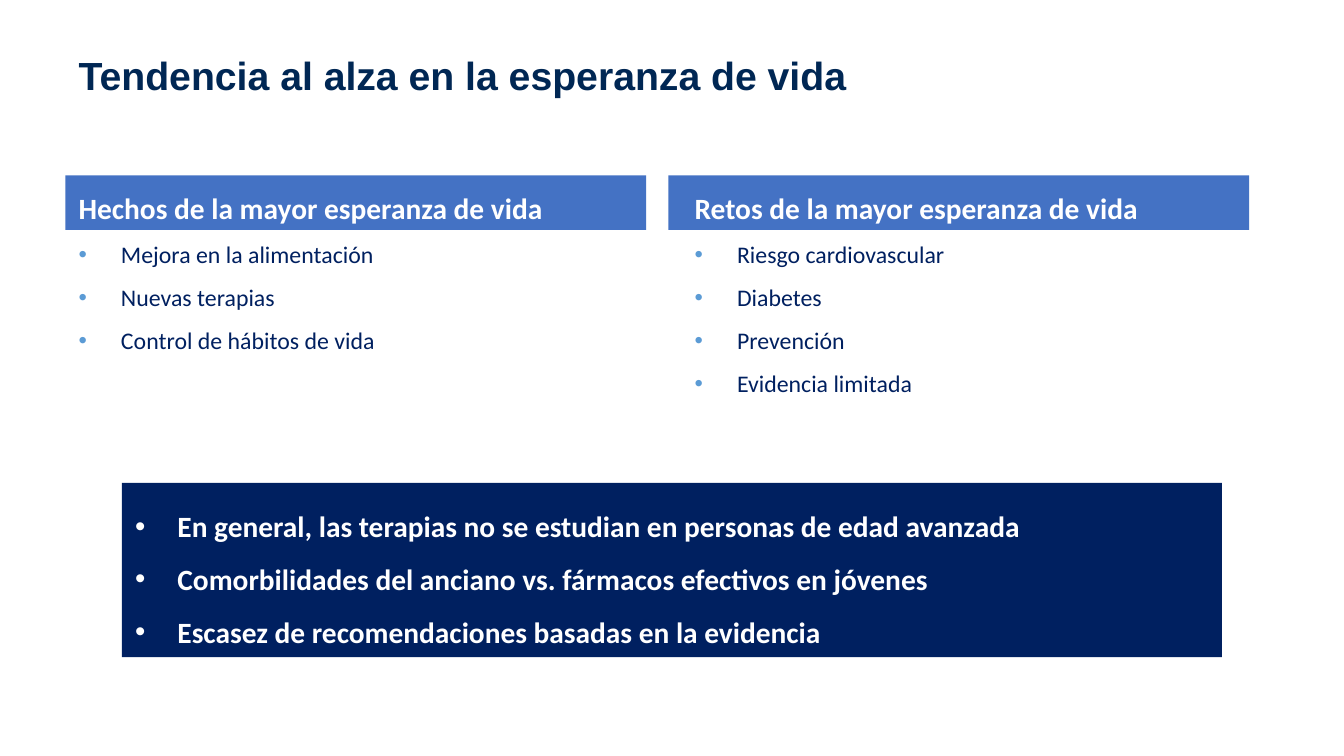
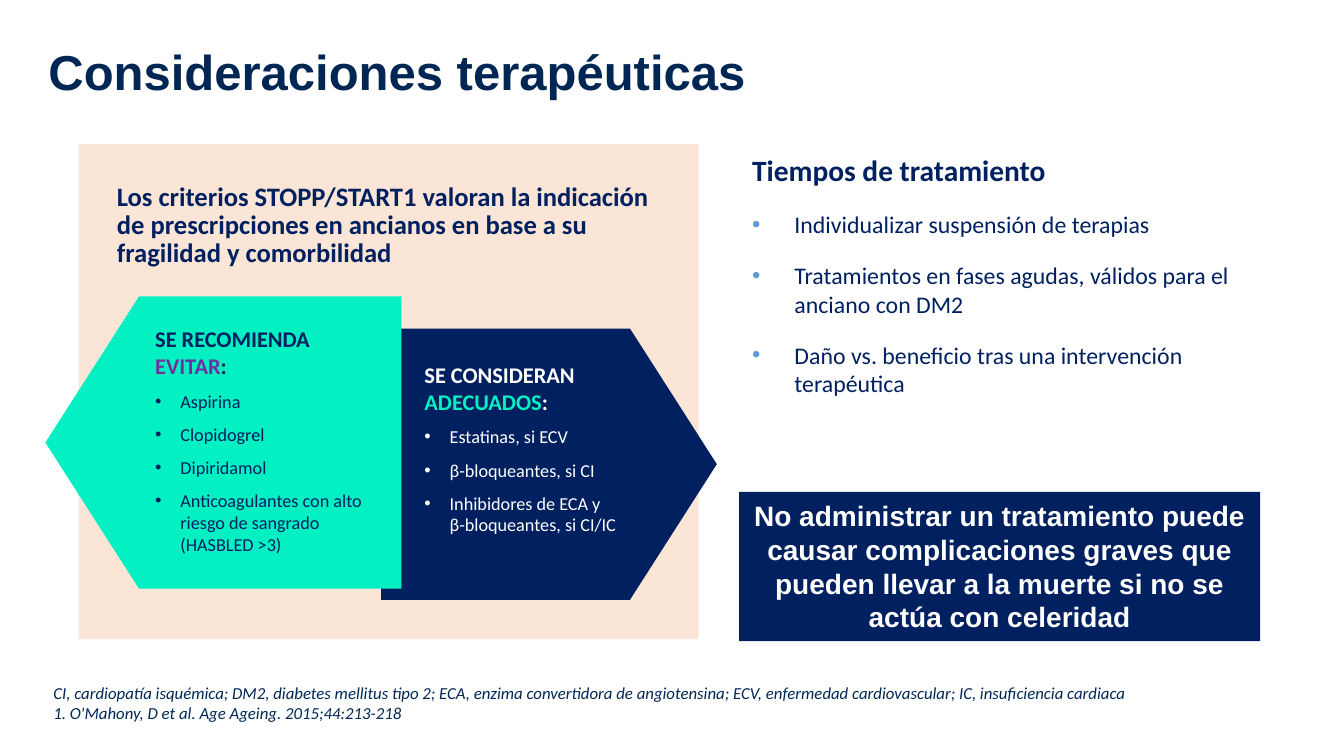
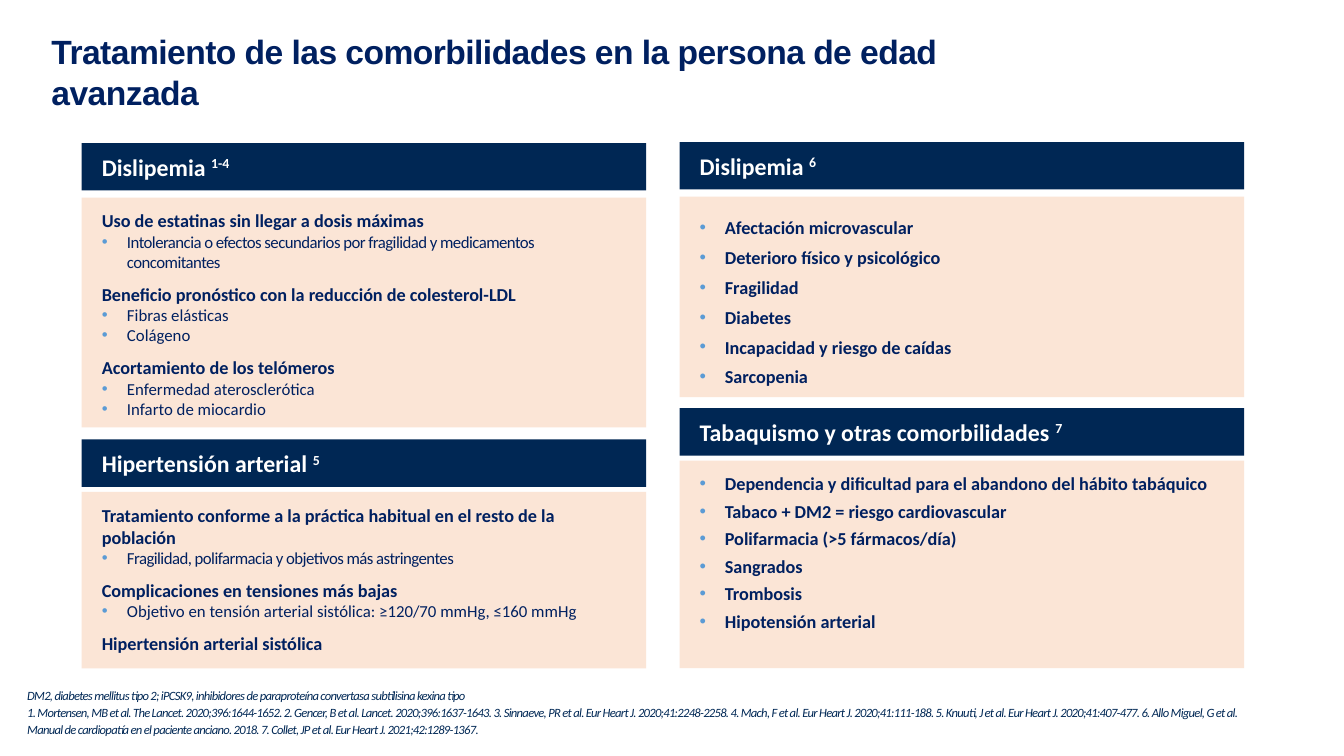
from dataclasses import dataclass, replace
from typing import Any

from lxml import etree
from pptx import Presentation
from pptx.dml.color import RGBColor
from pptx.enum.shapes import MSO_SHAPE
from pptx.enum.text import MSO_ANCHOR, MSO_AUTO_SIZE, PP_ALIGN
from pptx.oxml.ns import qn
from pptx.util import Emu, Pt

RECT, ARROW = MSO_SHAPE.RECTANGLE, MSO_SHAPE.PENTAGON
TOP, MIDDLE, BOTTOM = MSO_ANCHOR.TOP, MSO_ANCHOR.MIDDLE, MSO_ANCHOR.BOTTOM
LEFT, CENTER = PP_ALIGN.LEFT, PP_ALIGN.CENTER
FIXED = MSO_AUTO_SIZE.NONE
TITLE_ONLY = 5

SCALE = 9144  # EMU per px, 100 px to the inch
INSETS = (13, 7, 13, 7)

INK, NAVY, SLATE = "002754", "002060", "002855"
BLUE, SKY, PEACH = "4472C4", "5B9BD5", "FBE5D6"
MINT, PURPLE, WHITE = "03F0C2", "7030A0", "FFFFFF"


@dataclass(frozen=True)
class Style:
    """Look of a paragraph: sizes in points, indent in px."""
    size: float
    color: str = NAVY
    bold: bool = False
    italic: bool = False
    font: str = "Calibri"
    align: Any = LEFT
    line: Any = None
    before: int = 0
    track: int = 0
    indent: int = 0
    dot: str = ""


HEAD = Style(21, bold=True)
ITEM = Style(17, indent=42, dot=SKY)
NOTE = Style(12, SLATE, italic=True)
BAND = Style(17, WHITE, bold=True, line=Pt(20))
LEAD = Style(13, bold=True)
NEXT = replace(LEAD, before=8)
SUB = Style(12, indent=25, dot=SKY)
TIGHT = replace(SUB, track=-40)
POINT = replace(LEAD, indent=25, dot=SKY)


def px(n):
    return Emu(n * SCALE)


def rgb(code):
    return RGBColor.from_string(code)


def bullet(para, style):
    props = para._p.get_or_add_pPr()
    props.set("marL", str(px(style.indent)))
    props.set("indent", str(-px(style.indent)))
    tint = etree.SubElement(props, qn("a:buClr"))
    etree.SubElement(tint, qn("a:srgbClr")).set("val", style.dot)
    etree.SubElement(props, qn("a:buFont")).set("typeface", "Arial")
    etree.SubElement(props, qn("a:buChar")).set("char", "•")


def paint(run, style, color=None, raised=False):
    font = run.font
    font.name, font.size = style.font, Pt(style.size)
    font.bold, font.italic = style.bold, style.italic
    font.color.rgb = rgb(color or style.color)
    props = run._r.get_or_add_rPr()
    if style.track:
        props.set("spc", str(style.track))
    if raised:
        props.set("baseline", "30000")


def write(shape, rows, anchor=TOP, insets=INSETS):
    """Fill a shape with (style, text) rows; text may be a list of
    (text, options) runs."""
    frame = shape.text_frame
    frame.auto_size, frame.word_wrap = FIXED, True
    frame.vertical_anchor = anchor
    (frame.margin_left, frame.margin_top,
     frame.margin_right, frame.margin_bottom) = map(px, insets)
    for i, (style, text) in enumerate(rows):
        para = frame.add_paragraph() if i else frame.paragraphs[0]
        para.alignment = style.align
        if style.line:
            para.line_spacing = style.line
        if i and style.before:
            para.space_before = Pt(style.before)
        if style.dot:
            bullet(para, style)
        parts = [(text, {})] if isinstance(text, str) else text
        para.text = parts[0][0]
        for more, _ in parts[1:]:
            para.add_run().text = more
        for run, (_, opts) in zip(para.runs, parts):
            paint(run, style, **opts)


def rows_of(style, *texts):
    return [(style, text) for text in texts]


def block(slide, box, fill, kind=RECT):
    shape = slide.shapes.add_shape(kind, *map(px, box))
    shape.shadow.inherit = False
    shape.fill.solid()
    shape.fill.fore_color.rgb = rgb(fill)
    shape.line.fill.background()
    return shape


def label(slide, box, rows):
    write(slide.shapes.add_textbox(*map(px, box)), rows)


def start(deck, text, box, size, anchor=TOP, **look):
    """Add a slide with its title."""
    slide = deck.slides.add_slide(deck.slide_layouts[TITLE_ONLY])
    title = slide.shapes.title
    title.left, title.top, title.width, title.height = map(px, box)
    style = Style(size, **{"color": INK, **look}, bold=True, font="Arial")
    write(title, [(style, text)], anchor)
    return slide


def column(slide, bar, left, head, items):
    """Blue heading bar at bar, with its text and bullets at left."""
    shape = block(slide, (bar, 174, 576, 54), BLUE)
    write(shape, [(replace(HEAD, color=WHITE), head)], BOTTOM,
          (left - bar + 13, 0, 0, 4))
    label(slide, (left, 217, 602, 185),
          rows_of(replace(ITEM, line=1.5), *items))


def arrow(slide, box, fill, turn=0):
    shape = block(slide, box, fill, ARROW)
    shape.adjustments[0] = 0.32
    shape.rotation = turn


def advice(slide, box, color, head, key, tint, items):
    lead = Style(16, color, bold=True)
    item = Style(13, color, before=8, indent=25, dot=color)
    words = [(head + " ", {}), (key, {"color": tint}), (":", {})]
    label(slide, box, [(lead, words)] + rows_of(item, *items))


def card(slide, left, top, body, end, head, ref, rows):
    """Dark heading band at top and a peach panel from body to end."""
    band = block(slide, (left, top, 560, 47), INK)
    words = [(head + " ", {}), (ref, {"raised": True})]
    write(band, [(BAND, words)], MIDDLE, (20, 0, 13, 0))
    panel = block(slide, (left, body, 560, end - body), PEACH)
    write(panel, rows, TOP, (20, 12, 29, 0))


def trend(deck):
    slide = start(deck, "Tendencia al alza en la esperanza de vida",
                  (65, 44, 1103, 61), 28)
    column(slide, 65, 65, "Hechos de la mayor esperanza de vida",
           ["Mejora en la alimentación", "Nuevas terapias",
            "Control de hábitos de vida"])
    column(slide, 663, 676, "Retos de la mayor esperanza de vida",
           ["Riesgo cardiovascular", "Diabetes", "Prevención",
            "Evidencia limitada"])
    style = replace(HEAD, color=WHITE, line=1.5, indent=42, dot=WHITE)
    write(block(slide, (121, 479, 1091, 173), NAVY), rows_of(
        style,
        "En general, las terapias no se estudian en personas de edad avanzada",
        "Comorbilidades del anciano vs. fármacos efectivos en jóvenes",
        "Escasez de recomendaciones basadas en la evidencia"), MIDDLE)


def therapy(deck):
    slide = start(deck, "Consideraciones terapéuticas",
                  (35, 44, 1253, 60), 35, MIDDLE, line=0.9)
    block(slide, (78, 143, 615, 491), PEACH)
    label(slide, (40, 670, 1253, 54), rows_of(
        NOTE,
        "CI, cardiopatía isquémica; DM2, diabetes mellitus tipo 2; ECA, "
        "enzima convertidora de angiotensina; ECV, enfermedad "
        "cardiovascular; IC, insuficiencia cardiaca",
        "1. O'Mahony, D et al. Age Ageing. 2015;44:213-218"))
    label(slide, (103, 175, 562, 98), rows_of(
        Style(19, bold=True, line=Pt(20)),
        "Los criterios STOPP/START1 valoran la indicación de prescripciones "
        "en ancianos en base a su fragilidad y comorbilidad"))
    label(slide, (733, 144, 517, 259),
          [(HEAD, "Tiempos de tratamiento")] + rows_of(
              replace(ITEM, before=16),
              "Individualizar suspensión de terapias",
              "Tratamientos en fases agudas, válidos para el anciano con DM2",
              "Daño vs. beneficio tras una intervención terapéutica"))
    write(block(slide, (733, 488, 517, 148), NAVY), rows_of(
        Style(20, WHITE, bold=True, font="Arial", align=CENTER, line=Pt(24)),
        "No administrar un tratamiento puede causar complicaciones graves "
        "que pueden llevar a la muerte si no se actúa con celeridad"))
    arrow(slide, (378, 326, 333, 269), NAVY)
    arrow(slide, (45, 294, 353, 290), MINT, 180)
    advice(slide, (141, 316, 244, 244), NAVY, "SE RECOMIENDA", "EVITAR",
           PURPLE, ["Aspirina", "Clopidogrel", "Dipiridamol",
                    "Anticoagulantes con alto riesgo de sangrado "
                    "(HASBLED >3)"])
    advice(slide, (408, 351, 219, 188), WHITE, "SE CONSIDERAN", "ADECUADOS",
           MINT, ["Estatinas, si ECV", "β-bloqueantes, si CI",
                  "Inhibidores de ECA y β-bloqueantes, si CI/IC"])


def illness(deck):
    slide = start(
        deck,
        "Tratamiento de las comorbilidades en la persona de edad avanzada",
        (38, 24, 1051, 94), 24, color=NAVY, track=-40)
    label(slide, (14, 674, 1253, 64), rows_of(
        replace(NOTE, size=9, line=Pt(12), track=-50),
        "DM2, diabetes mellitus tipo 2; iPCSK9, inhibidores de paraproteína "
        "convertasa subtilisina kexina tipo",
        "1. Mortensen, MB et al. The Lancet. 2020;396:1644-1652. "
        "2. Gencer, B et al. Lancet. 2020;396:1637-1643. "
        "3. Sinnaeve, PR et al. Eur Heart J. 2020;41:2248-2258. "
        "4. Mach, F et al. Eur Heart J. 2020;41:111-188. "
        "5. Knuuti, J et al. Eur Heart J. 2020;41:407-477. "
        "6. Allo Miguel, G et al. Manual de cardiopatía en el paciente "
        "anciano. 2018. "
        "7. Collet, JP et al. Eur Heart J. 2021;42:1289-1367."))
    card(slide, 81, 142, 196, 424, "Dislipemia", "1-4", [
        (LEAD, "Uso de estatinas sin llegar a dosis máximas"),
        (TIGHT, "Intolerancia o efectos secundarios por fragilidad y "
                "medicamentos concomitantes"),
        (NEXT, "Beneficio pronóstico con la reducción de colesterol-LDL"),
        (SUB, "Fibras elásticas"),
        (SUB, "Colágeno"),
        (NEXT, "Acortamiento de los telómeros"),
        (SUB, "Enfermedad aterosclerótica"),
        (SUB, "Infarto de miocardio")])
    card(slide, 81, 436, 488, 663, "Hipertensión arterial", "5", [
        (LEAD, "Tratamiento conforme a la práctica habitual en el resto de "
               "la población"),
        (TIGHT, "Fragilidad, polifarmacia y objetivos más astringentes"),
        (NEXT, "Complicaciones en tensiones más bajas"),
        (SUB, "Objetivo en tensión arterial sistólica: ≥120/70 mmHg, "
              "≤160 mmHg"),
        (NEXT, "Hipertensión arterial sistólica")])
    card(slide, 674, 141, 195, 394, "Dislipemia", "6", rows_of(
        replace(POINT, line=Pt(21.3)),
        "Afectación microvascular", "Deterioro físico y psicológico",
        "Fragilidad", "Diabetes", "Incapacidad y riesgo de caídas",
        "Sarcopenia"))
    card(slide, 674, 405, 457, 663, "Tabaquismo y otras comorbilidades", "7",
         rows_of(
             replace(POINT, before=4),
             "Dependencia y dificultad para el abandono del hábito tabáquico",
             "Tabaco + DM2 = riesgo cardiovascular",
             "Polifarmacia (>5 fármacos/día)", "Sangrados", "Trombosis",
             "Hipotensión arterial"))


def main():
    deck = Presentation()
    deck.slide_width, deck.slide_height = px(1333), px(750)
    trend(deck)
    therapy(deck)
    illness(deck)
    deck.save("out.pptx")


if __name__ == "__main__":
    main()
